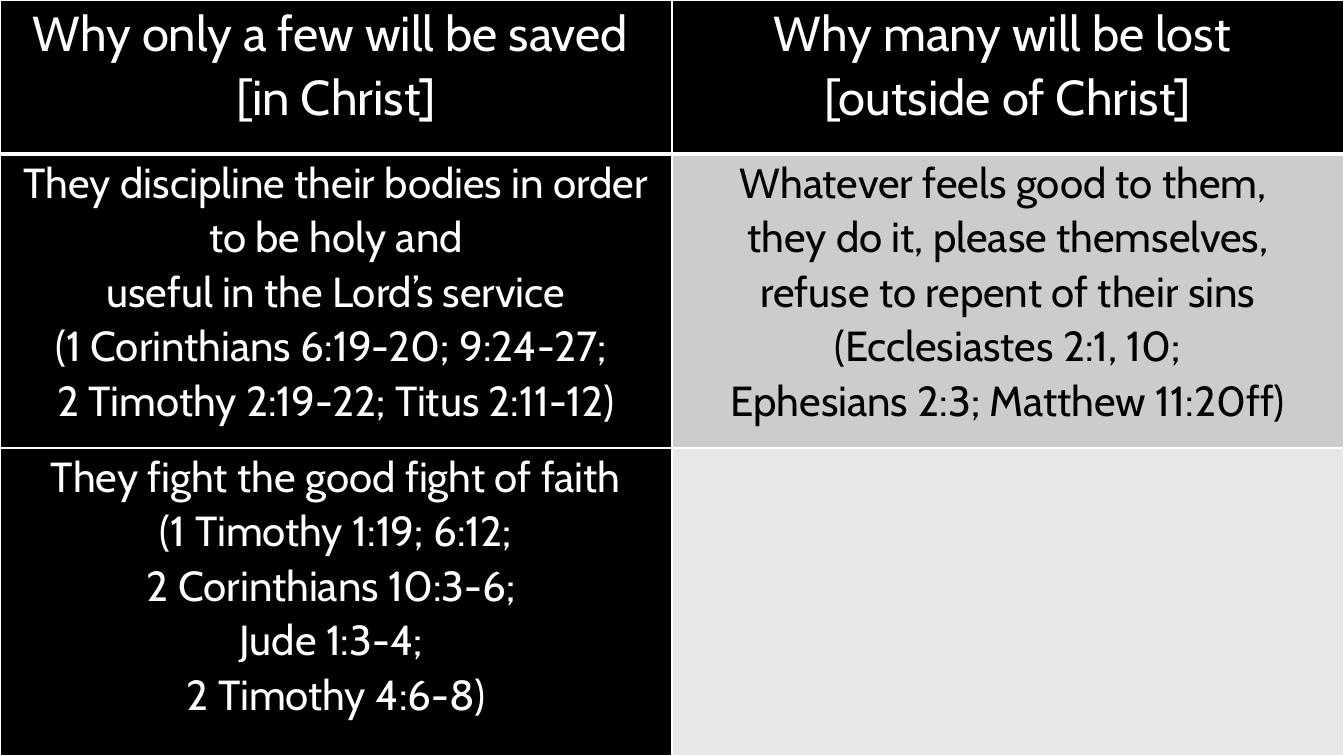
from lxml import etree
from pptx import Presentation
from pptx.dml.color import RGBColor
from pptx.enum import text
from pptx.oxml import ns
from pptx.util import Pt

BLACK = RGBColor(0x00, 0x00, 0x00)
WHITE = RGBColor(0xFF, 0xFF, 0xFF)
GRAY = RGBColor(0xCC, 0xCC, 0xCC)
PALE = RGBColor(0xE7, 0xE7, 0xE7)

WIDTH, HEIGHT = 960, 540
ROW_HEIGHTS = [110, 210, 220]
HEADING_SIZE, BODY_SIZE = 35, 30

# Each cell: text, fill, font colour
ROWS = [
    [("Why only a few will be saved \n[in Christ]", BLACK, WHITE),
     ("Why many will be lost \n[outside of Christ]", BLACK, WHITE)],
    [("They discipline their bodies in order to be holy and\n"
      "useful in the Lord’s service\n"
      "(1 Corinthians 6:19-20; 9:24-27; \n"
      "2 Timothy 2:19-22; Titus 2:11-12)", BLACK, WHITE),
     ("Whatever feels good to them, \n"
      "they do it, please themselves,\n"
      "refuse to repent of their sins\n"
      "(Ecclesiastes 2:1, 10;\n"
      "Ephesians 2:3; Matthew 11:20ff)", GRAY, BLACK)],
    [("They fight the good fight of faith\n"
      "(1 Timothy 1:19; 6:12;\n"
      "2 Corinthians 10:3-6; \n"
      "Jude 1:3-4; \n"
      "2 Timothy 4:6-8)", BLACK, WHITE),
     ("", PALE, BLACK)],
]


def set_borders(cell, widths):
    """Draw white cell borders; widths maps L, R, T, B to points."""
    properties = cell._tc.get_or_add_tcPr()
    for position, (side, width) in enumerate(widths.items()):
        line = etree.Element(ns.qn(f"a:ln{side}"), w=str(Pt(width)))
        fill = etree.SubElement(line, ns.qn("a:solidFill"))
        etree.SubElement(fill, ns.qn("a:srgbClr"), val=str(WHITE))
        properties.insert(position, line)


deck = Presentation()
deck.slide_width, deck.slide_height = Pt(WIDTH), Pt(HEIGHT)
page = deck.slides.add_slide(deck.slide_layouts[6])
page.background.fill.solid()
page.background.fill.fore_color.rgb = BLACK

table = page.shapes.add_table(
    len(ROWS), 2, Pt(0), Pt(0), Pt(WIDTH), Pt(HEIGHT)).table
for column in table.columns:
    column.width = Pt(WIDTH / 2)

for row_index, cells in enumerate(ROWS):
    table.rows[row_index].height = Pt(ROW_HEIGHTS[row_index])
    for column_index, (words, fill_color, font_color) in enumerate(cells):
        cell = table.cell(row_index, column_index)
        cell.fill.solid()
        cell.fill.fore_color.rgb = fill_color
        cell.margin_left = cell.margin_right = Pt(5)
        cell.margin_top = cell.margin_bottom = Pt(0)
        set_borders(cell, {"L": 1, "R": 1,
                           "T": 3 if row_index == 1 else 1,
                           "B": 3 if row_index == 0 else 1})
        cell.text_frame.text = words
        for para in cell.text_frame.paragraphs:
            para.alignment = text.PP_ALIGN.CENTER
            para.line_spacing = 1.07
            for span in para.runs:
                span.font.name = "Cabin"
                span.font.size = Pt(HEADING_SIZE if row_index == 0 else BODY_SIZE)
                span.font.bold = False
                span.font.color.rgb = font_color

deck.save("out.pptx")
